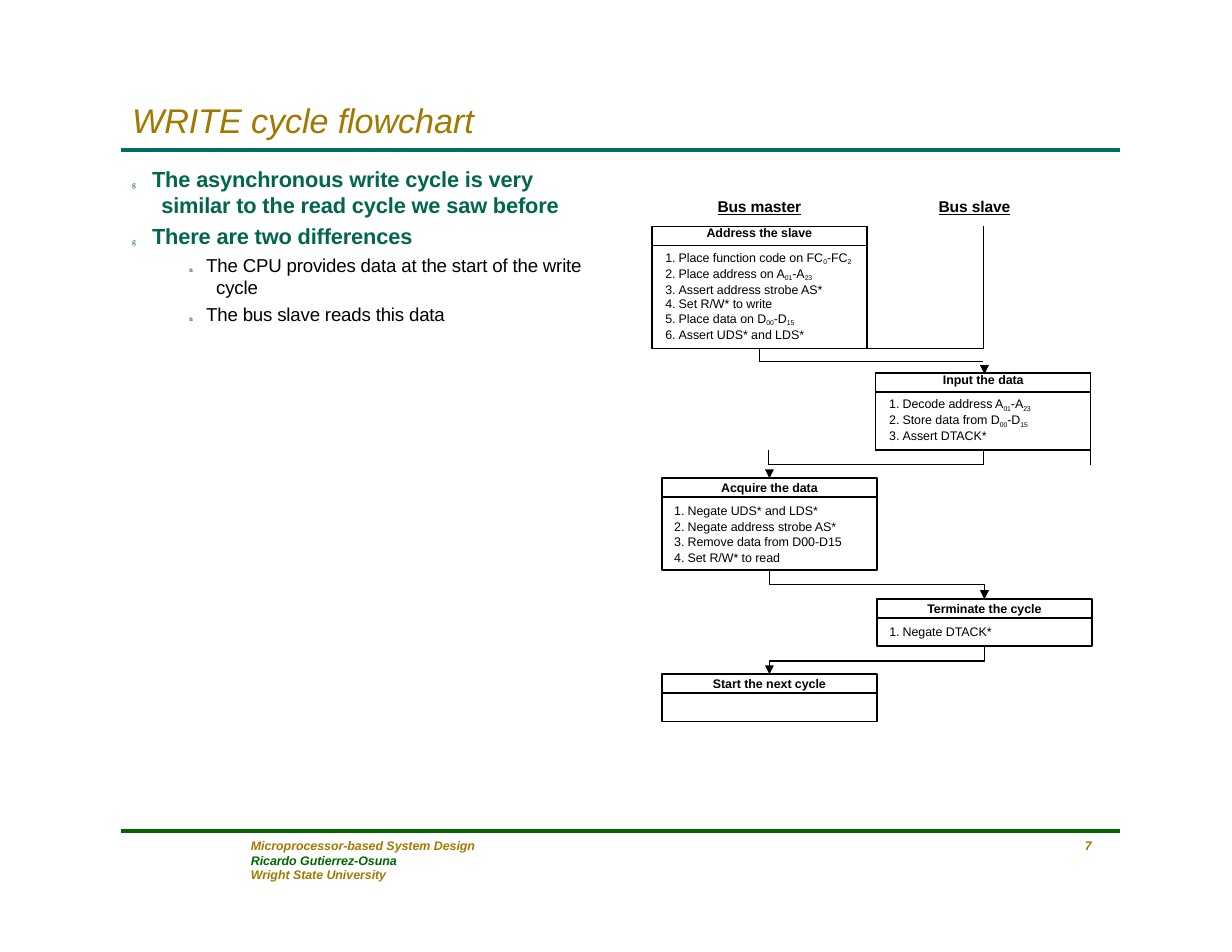
from itertools import product
from lxml import etree
from pptx import Presentation
from pptx.dml.color import RGBColor
from pptx.enum.shapes import MSO_CONNECTOR, MSO_SHAPE
from pptx.enum.text import MSO_ANCHOR, MSO_AUTO_SIZE, PP_ALIGN
from pptx.oxml.ns import qn
from pptx.util import Inches, Pt

LEFT, CENTER, RIGHT = PP_ALIGN.LEFT, PP_ALIGN.CENTER, PP_ALIGN.RIGHT
TOP, MIDDLE = MSO_ANCHOR.TOP, MSO_ANCHOR.MIDDLE
RECTANGLE, TRIANGLE = MSO_SHAPE.RECTANGLE, MSO_SHAPE.FLOWCHART_MERGE
STRAIGHT = MSO_CONNECTOR.STRAIGHT
NO_RESIZE = MSO_AUTO_SIZE.NONE
GOLD, GREEN, TEAL, RULE_TEAL, BLACK = "A27900", "006600", "00664D", "016D60", "000000"
PLAIN_TABLE = "{2D5ABB26-0587-4C30-8999-92F81FD0307C}"


def color(value):
    return RGBColor.from_string(value)


def grid(*cells):
    return [Inches(cell / 10) for cell in cells]


class FlowSlide:
    font = "Arial"
    line_width = Pt(0.96)
    box_width, header_height = 19.2, 1.7

    def __init__(self, presentation):
        self.slide = presentation.slides.add_slide(presentation.slide_layouts[1])
        self.shapes = self.slide.shapes

    def style(self, run, size, ink=BLACK, bold=False, italic=False, font=None, spacing=-0.05):
        run.font.name = font or self.font
        run.font.size = Pt(size)
        run.font.color.rgb = color(ink)
        run.font.bold, run.font.italic = bold, italic
        run._r.get_or_add_rPr().set("spc", str(round(spacing * 100)))

    def frame(self, text_frame, anchor=TOP, left=0, top=0):
        text_frame.word_wrap = True
        text_frame.auto_size = NO_RESIZE
        text_frame.vertical_anchor = anchor
        text_frame.margin_left, text_frame.margin_top = grid(left, top)
        text_frame.margin_right = text_frame.margin_bottom = 0

    def place(self, shape, area):
        shape.left, shape.top, shape.width, shape.height = grid(*area)

    def title(self, text, area):
        shape = self.shapes.title
        self.place(shape, area)
        self.frame(shape.text_frame, MIDDLE)
        shape.text_frame.text = text
        paragraph = shape.text_frame.paragraphs[0]
        paragraph.alignment = LEFT
        self.style(paragraph.runs[0], 22, GOLD, italic=True)

    def body(self, items, area):
        shape = self.slide.placeholders[1]
        self.place(shape, area)
        self.frame(shape.text_frame, top=0.3)
        shape.text_frame.text = "\n".join(text for level, text in items)
        for index, (paragraph, (level, text)) in enumerate(zip(shape.text_frame.paragraphs, items)):
            properties = paragraph._p.get_or_add_pPr()
            properties.set("marL", str(Inches((0.27, 0.76)[level])))
            properties.set("indent", str(Inches((-0.26, -0.24)[level])))
            etree.SubElement(properties, qn("a:buNone"))
            paragraph.level = level
            paragraph.space_before = Pt(3 if index else 0)
            paragraph.text = ("g ", "n ")[level]
            self.style(paragraph.runs[0], (5, 4.5)[level], (TEAL, BLACK)[level],
                       font="Times New Roman", spacing=(4.5, 3.7)[level])
            run = paragraph.add_run()
            run.text = text
            self.style(run, (14, 12)[level], (TEAL, BLACK)[level], bold=level == 0, spacing=-0.1)

    def label(self, lines, area, size, inks, alignment=LEFT, italic=False, underline=False):
        text_frame = self.shapes.add_textbox(*grid(*area)).text_frame
        self.frame(text_frame, top=0.2 if underline else 0)
        text_frame.text = "\n".join(lines)
        for paragraph, ink in zip(text_frame.paragraphs, inks):
            paragraph.alignment = alignment
            self.style(paragraph.runs[0], size, ink, bold=True, italic=italic)
            paragraph.runs[0].font.underline = underline

    def rule(self, row, ink):
        connector = self.shapes.add_connector(STRAIGHT, *grid(10.8, row, 100, row))
        connector.line.color.rgb = color(ink)
        connector.line.width = Pt(2.88)
        etree.SubElement(connector._element.spPr, qn("a:effectLst"))

    def heading(self, text_frame, text):
        self.frame(text_frame, MIDDLE)
        text_frame.text = text
        paragraph = text_frame.paragraphs[0]
        paragraph.alignment = CENTER
        self.style(paragraph.runs[0], 8, bold=True)

    def steps(self, text_frame, steps):
        self.frame(text_frame, left=1.1, top=0.55)
        text_frame.text = "\n".join(steps)
        for index, (paragraph, step) in enumerate(zip(text_frame.paragraphs, steps)):
            paragraph.text = ""
            paragraph.alignment = LEFT
            paragraph.space_before = Pt(0.4 if index else 0)
            properties = paragraph._p.get_or_add_pPr()
            properties.set("marL", str(Inches(0.12)))
            properties.set("indent", str(Inches(-0.12)))
            etree.SubElement(properties, qn("a:buFont"), typeface=self.font)
            etree.SubElement(properties, qn("a:buAutoNum"), type="arabicPeriod")
            for position, part in enumerate(filter(None, step.split("~"))):
                run = paragraph.add_run()
                run.text = part
                subscript = position % 2 == 1
                self.style(run, 7.5 if subscript else 8)
                if subscript:
                    run._r.get_or_add_rPr().set("baseline", "-22000")

    def rectangle(self, area):
        shape = self.shapes.add_shape(RECTANGLE, *grid(*area))
        shape.shadow.inherit = False
        shape.fill.background()
        shape.line.color.rgb = color(BLACK)
        shape.line.width = self.line_width
        return shape.text_frame

    def flow_box(self, column, row, height, heading, steps):
        self.heading(self.rectangle((column, row, self.box_width, self.header_height)), heading)
        body = self.rectangle((column, row + self.header_height, self.box_width, height))
        if steps:
            self.steps(body, steps)

    def arrow(self, column, tip):
        shape = self.shapes.add_shape(TRIANGLE, *grid(column - 0.4, tip - 0.8, 0.8, 0.8))
        shape.shadow.inherit = False
        shape.fill.solid()
        shape.fill.fore_color.rgb = color(BLACK)
        shape.line.fill.background()

    def elbow(self, start, end, top, tip):
        bend = top + 1.3
        points = [grid(*point) for point in ((start, top), (start, bend), (end, bend), (end, tip - 0.6))]
        builder = self.shapes.build_freeform(*points[0])
        builder.add_line_segments(points[1:], close=False)
        shape = builder.convert_to_shape()
        shape.shadow.inherit = False
        shape.fill.background()
        shape.line.color.rgb = color(BLACK)
        shape.line.width = self.line_width
        self.arrow(end, tip)

    def border(self, cell, sides):
        cell.fill.background()
        properties = cell._tc.get_or_add_tcPr()
        for index, side in enumerate(side for side in "LRTB" if side in sides):
            line = etree.Element(qn("a:ln" + side), w=str(Pt(1)))
            fill = etree.SubElement(line, qn("a:solidFill"))
            etree.SubElement(fill, qn("a:srgbClr"), val=BLACK)
            properties.insert(index, line)

    def flow_table(self, column, row, widths, heights, regions, heading, steps):
        area = grid(column, row, sum(widths), sum(heights))
        table = self.shapes.add_table(len(heights), len(widths), *area).table
        table.first_row = table.horz_banding = False
        table._tbl.tblPr.find(qn("a:tableStyleId")).text = PLAIN_TABLE
        for track, length in zip([*table.columns], grid(*widths)):
            track.width = length
        for track, length in zip([*table.rows], grid(*heights)):
            track.height = length
        for first_row, first_column, last_row, last_column, sides, content in regions:
            origin = table.cell(first_row, first_column)
            if (first_row, first_column) != (last_row, last_column):
                origin.merge(table.cell(last_row, last_column))
            for position in product(range(first_row, last_row + 1), range(first_column, last_column + 1)):
                cell = table.cell(*position)
                cell.margin_left = cell.margin_right = cell.margin_top = cell.margin_bottom = 0
                cell.text_frame.paragraphs[0]._p.get_or_add_endParaRPr().set("sz", "400")
                self.border(cell, sides)
            if content == "heading":
                self.heading(origin.text_frame, heading)
            elif content == "steps":
                self.steps(origin.text_frame, steps)
            if content:
                origin.margin_left, origin.margin_top = grid(*((0, 0) if content == "heading" else (1.2, 0.5)))


def main():
    presentation = Presentation()
    presentation.slide_width, presentation.slide_height = grid(110, 85)
    slide = FlowSlide(presentation)
    slide.rule(13.4, RULE_TEAL)
    slide.rule(74.2, GREEN)
    slide.title("WRITE cycle flowchart", (11.8, 8.7, 60, 4))
    slide.body([(0, "The asynchronous write cycle is very similar to the read cycle we saw before"),
                (0, "There are two differences"),
                (1, "The CPU provides data at the start of the write cycle"),
                (1, "The bus slave reads this data")], (11.7, 14.5, 41.3, 14.5))
    slide.label(["Bus master"], (62.8, 17.4, 10, 2), 10, [BLACK], CENTER, underline=True)
    slide.label(["Bus slave"], (82, 17.4, 10, 2), 10, [BLACK], CENTER, underline=True)

    slide.flow_table(58.2, 20.2, (9.6, 9.6, 10.4), (1.7, 9.2, 1.2),
                     [(0, 0, 0, 1, "LRTB", "heading"), (1, 0, 1, 1, "LRTB", "steps"),
                      (0, 2, 1, 2, "LB", None), (2, 0, 2, 0, "TR", None), (2, 1, 2, 2, "LTB", None)],
                     "Address the slave",
                     ["Place function code on FC~0~-FC~2~", "Place address on A~01~-A~23~",
                      "Assert address strobe AS*", "Set R/W* to write",
                      "Place data on D~00~-D~15~", "Assert UDS* and LDS*"])
    slide.flow_table(68.6, 33.3, (9.6, 9.6, 9.6), (1.7, 5.2, 1.3),
                     [(0, 0, 1, 0, "R", None), (0, 1, 0, 2, "LRTB", "heading"),
                      (1, 1, 1, 2, "LRTB", "steps"), (2, 0, 2, 1, "LRB", None), (2, 2, 2, 2, "LT", None)],
                     "Input the data",
                     ["Decode address A~01~-A~23~", "Store data from D~00~-D~15~", "Assert DTACK*"])

    master, slave = 59.1, 78.3
    master_middle, slave_middle = master + slide.box_width / 2, slave + slide.box_width / 2
    slide.flow_box(master, 42.7, 6.5, "Acquire the data",
                   ["Negate UDS* and LDS*", "Negate address strobe AS*",
                    "Remove data from D00-D15", "Set R/W* to read"])
    slide.flow_box(slave, 53.5, 2.5, "Terminate the cycle", ["Negate DTACK*"])
    slide.flow_box(master, 60.2, 2.5, "Start the next cycle", [])
    slide.arrow(slave_middle, 33.4)
    slide.arrow(master_middle, 42.7)
    slide.elbow(master_middle, slave_middle, 50.9, 53.5)
    slide.elbow(slave_middle, master_middle, 57.7, 60.2)

    slide.label(["Microprocessor-based System Design", "Ricardo Gutierrez-Osuna", "Wright State University"],
                (22.4, 74.8, 24, 4.2), 8, [GOLD, GREEN, GOLD], italic=True)
    slide.label(["7"], (95.5, 74.8, 2, 1.5), 8, [GOLD], RIGHT, italic=True)
    presentation.save("out.pptx")


if __name__ == "__main__":
    main()
